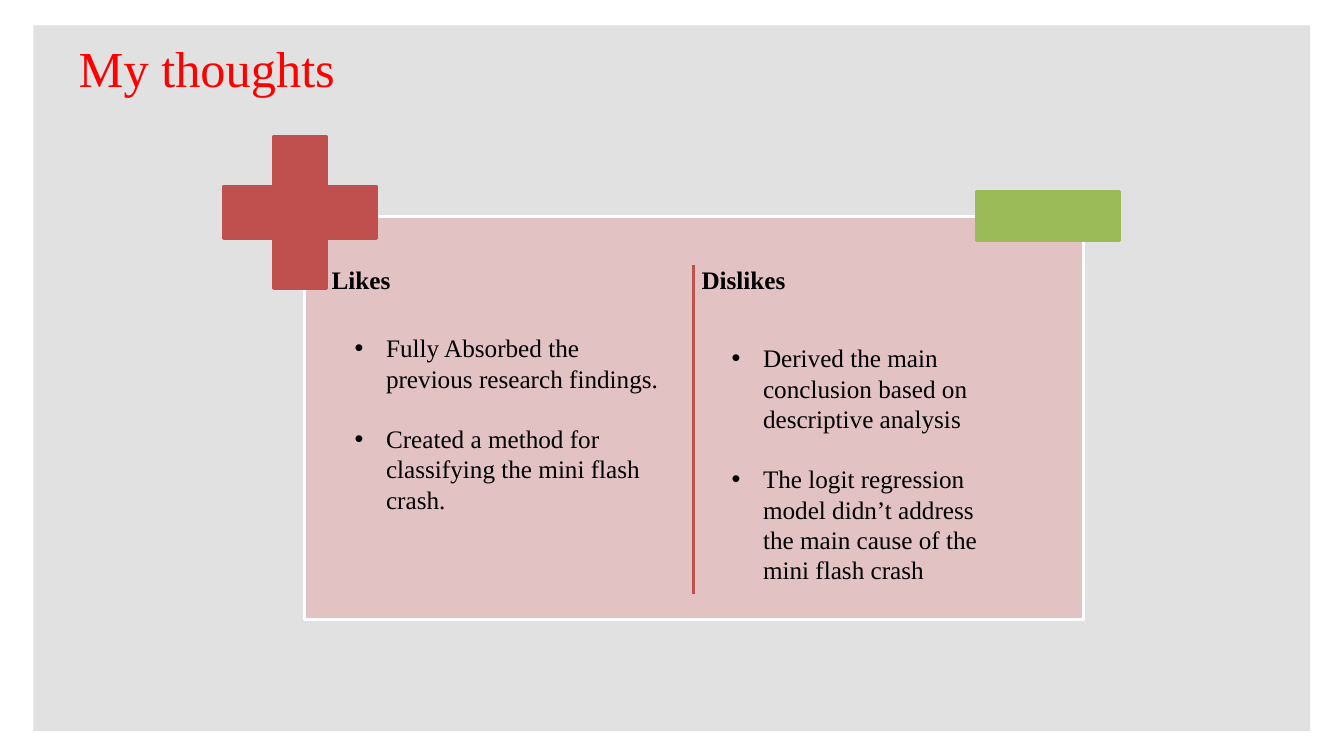
from pptx import Presentation
from pptx.dml.color import RGBColor
from pptx.enum.shapes import MSO_CONNECTOR as Connector, MSO_SHAPE as Shape
from pptx.enum.text import MSO_ANCHOR as Anchor, MSO_AUTO_SIZE as AutoSize, PP_ALIGN as Align
from pptx.oxml.ns import qn
from pptx.util import Cm, Pt
from lxml.etree import SubElement

FONT = "Times New Roman"
RED, GREEN, PINK, GREY = "C0504D", "9BBB59", "E2C2C2", "E1E1E1"
LIKES = ["Fully Absorbed the previous research findings.",
         "Created a method for classifying the mini flash crash."]
DISLIKES = ["Derived the main conclusion based on descriptive analysis",
            "The logit regression model didn’t address the main cause of the mini flash crash"]


def color(value):
    return RGBColor.from_string(value)


def set_font(para, size, value="000000", bold=False):
    para.font.name, para.font.size, para.font.bold = FONT, Pt(size), bold
    para.font.color.rgb = color(value)


def add_block(slide, kind, box, fill, line=None):
    block = slide.shapes.add_shape(kind, *map(Cm, box))
    block.shadow.inherit = False
    block.fill.solid()
    block.fill.fore_color.rgb = color(fill)
    if line:
        block.line.color.rgb = color(line)
        block.line.width = Pt(2)
    else:
        block.line.fill.background()
    return block


def add_backdrop(slide, box):
    backdrop = add_block(slide, Shape.RECTANGLE, box, GREY)
    slide.shapes._spTree.insert(2, backdrop._element)  # behind the title


def add_title(slide, box, text):
    title = slide.shapes.title
    title.left, title.top, title.width, title.height = map(Cm, box)
    frame = title.text_frame
    frame.text = text
    frame.vertical_anchor = Anchor.TOP
    frame.auto_size = AutoSize.NONE
    para = frame.paragraphs[0]
    para.alignment = Align.LEFT
    set_font(para, 36, "FF0000")


def add_heading(slide, box, text):
    heading = slide.shapes.add_textbox(*map(Cm, box))
    frame = heading.text_frame
    frame.word_wrap = True
    frame.margin_left = frame.margin_right = Cm(0.1)
    frame.margin_top = frame.margin_bottom = Cm(0.1)
    para = frame.paragraphs[0]
    para.text = text
    para.line_spacing = 0.9
    set_font(para, 18, bold=True)


def add_bullets(slide, box, points):
    frame = slide.shapes.add_textbox(*map(Cm, box)).text_frame
    frame.word_wrap = True
    frame.auto_size = AutoSize.SHAPE_TO_FIT_TEXT
    for index, point in enumerate(points):
        para = frame.add_paragraph() if index else frame.paragraphs[0]
        para.text = point
        if index:
            para.space_before = Pt(21.6)
        properties = para._p.get_or_add_pPr()
        properties.set("marL", str(Cm(0.79)))
        properties.set("indent", str(-Cm(0.79)))
        SubElement(properties, qn("a:buFont")).set("typeface", "Arial")
        SubElement(properties, qn("a:buChar")).set("char", "•")
        set_font(para, 18)


def add_divider(slide, x, top, bottom):
    divider = slide.shapes.add_connector(Connector.STRAIGHT, Cm(x), Cm(top), Cm(x), Cm(bottom))
    divider.line.color.rgb = color(RED)
    divider.line.width = Pt(2)
    SubElement(divider._element.spPr, qn("a:effectLst"))


def add_comparison(slide, box):
    left, top, width, height = box
    add_block(slide, Shape.RECTANGLE, box, PINK, "FFFFFF")

    # Headings
    for offset, text in ((0.59, "Likes"), (9.91, "Dislikes")):
        add_heading(slide, (left + offset, top + 1.19, 9.12, 8.69), text)

    # Plus and minus signs on the upper corners
    plus = add_block(slide, Shape.CROSS, (left - 2.03, top - 2.03, 3.84, 3.84), RED, RED)
    plus.adjustments[0] = 0.328
    add_block(slide, Shape.RECTANGLE, (left + 16.94, top - 0.63, 3.61, 1.24), GREEN, GREEN)

    # Divider and bullet lists
    add_divider(slide, left + width / 2, top + 1.22, top + height - 0.66)
    add_bullets(slide, (left + 1.02, top + 2.8, 8.43, 5.64), LIKES)
    add_bullets(slide, (left + 10.52, top + 3.05, 7.42, 7.19), DISLIKES)


def main():
    deck = Presentation()
    deck.slide_width, deck.slide_height = Cm(33.87), Cm(19.05)
    slide = deck.slides.add_slide(deck.slide_layouts[5])
    add_backdrop(slide, (0.84, 0.64, 32.18, 17.78))
    add_title(slide, (1.73, 0.81, 26.8, 2.72), "My thoughts")
    add_comparison(slide, (7.67, 5.46, 19.63, 10.16))
    deck.save("out.pptx")


if __name__ == "__main__":
    main()
